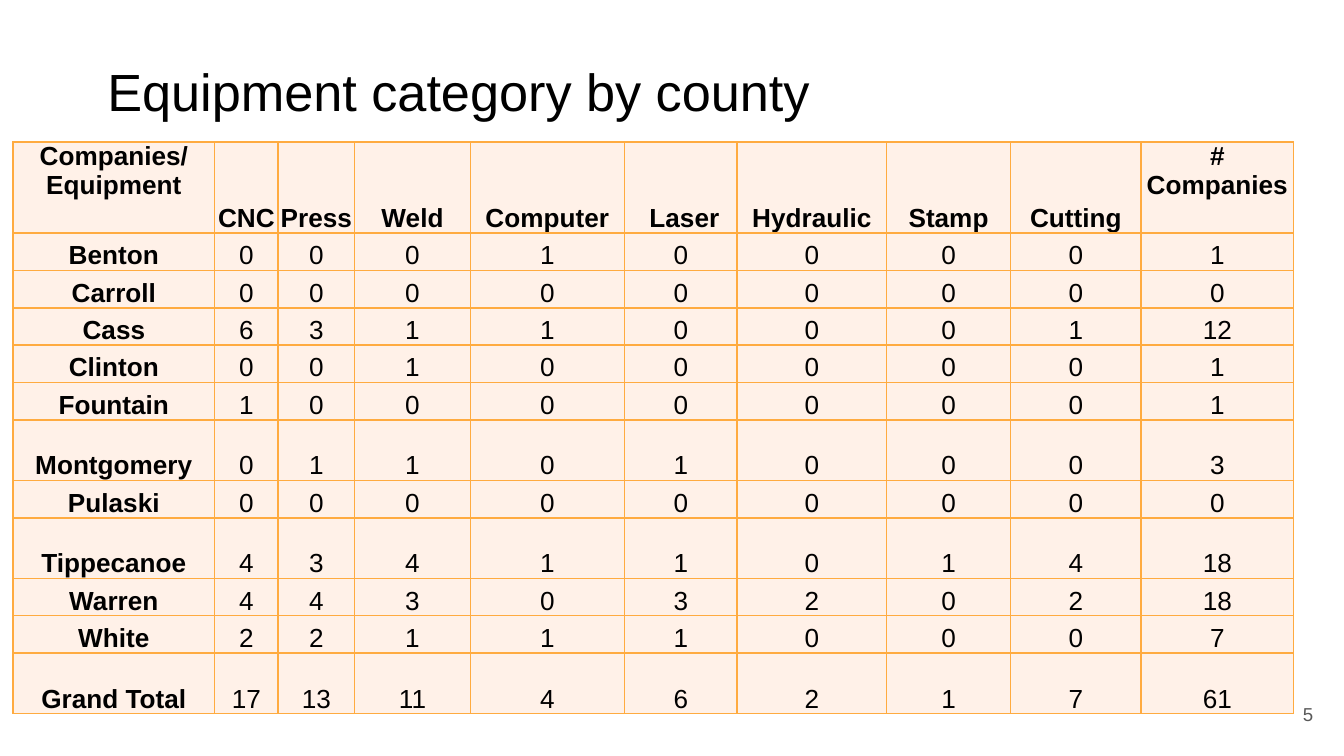
from pptx import Presentation
from pptx.dml.color import RGBColor
from pptx.enum.text import MSO_ANCHOR, PP_ALIGN
from pptx.oxml import parse_xml
from pptx.oxml.ns import nsdecls
from pptx.util import Pt

COLORS = {"text": "000000", "number": "595959", "cell": "FFF1E8", "border": "FFAB40"}

TITLE = "Equipment category by county"
PAGE = "5"
HEADER = ["Companies/\nEquipment", "CNC", "Press", "Weld", "Computer", " Laser",
          "Hydraulic", "Stamp", "Cutting", "# Companies"]
COUNTIES = [
    ("Benton", 0, 0, 0, 1, 0, 0, 0, 0, 1),
    ("Carroll", 0, 0, 0, 0, 0, 0, 0, 0, 0),
    ("Cass", 6, 3, 1, 1, 0, 0, 0, 1, 12),
    ("Clinton", 0, 0, 1, 0, 0, 0, 0, 0, 1),
    ("Fountain", 1, 0, 0, 0, 0, 0, 0, 0, 1),
    ("Montgomery", 0, 1, 1, 0, 1, 0, 0, 0, 3),
    ("Pulaski", 0, 0, 0, 0, 0, 0, 0, 0, 0),
    ("Tippecanoe", 4, 3, 4, 1, 1, 0, 1, 4, 18),
    ("Warren", 4, 4, 3, 0, 3, 2, 0, 2, 18),
    ("White", 2, 2, 1, 1, 1, 0, 0, 0, 7),
    ("Grand Total", 17, 13, 11, 4, 6, 2, 1, 7, 61),
]
COL_WIDTHS = [108, 34, 41, 62, 82.5, 60.5, 80, 66.5, 70, 81.5]
HEADER_HEIGHT, ROW_HEIGHT, TALL_HEIGHT = 49, 20, 32.5
TALL_ROWS = {"Montgomery", "Tippecanoe", "Grand Total"}


def write(tf, text, size=14, color="text", bold=False, align=PP_ALIGN.CENTER):
    tf.word_wrap = True
    for i, line in enumerate(text.split("\n")):
        p = tf.add_paragraph() if i else tf.paragraphs[0]
        p.alignment = align
        r = p.add_run()
        r.text = line
        r.font.name = "Arial"
        r.font.size = Pt(size)
        r.font.bold = bold
        r.font.color.rgb = RGBColor.from_string(COLORS[color])


def add_text(slide, box, text, anchor=MSO_ANCHOR.TOP, inset_top=7.2, **fmt):
    tf = slide.shapes.add_textbox(*map(Pt, box)).text_frame
    tf.margin_left = tf.margin_right = tf.margin_bottom = Pt(7.2)
    tf.margin_top = Pt(inset_top)
    tf.vertical_anchor = anchor
    write(tf, text, **fmt)


def style_cell(cell, anchor):
    cell.margin_left = cell.margin_right = cell.margin_top = cell.margin_bottom = 0
    cell.vertical_anchor = anchor
    tc_pr = cell._tc.get_or_add_tcPr()
    for side in ("lnL", "lnR", "lnT", "lnB"):
        tc_pr.append(parse_xml(
            f'<a:{side} {nsdecls("a")} w="{Pt(1)}"><a:solidFill>'
            f'<a:srgbClr val="{COLORS["border"]}"/></a:solidFill></a:{side}>'))
    cell.fill.solid()
    cell.fill.fore_color.rgb = RGBColor.from_string(COLORS["cell"])


def add_county_table(slide, left, top):
    rows = [HEADER, *COUNTIES]
    heights = [HEADER_HEIGHT] + [TALL_HEIGHT if row[0] in TALL_ROWS else ROW_HEIGHT
                                 for row in COUNTIES]
    table = slide.shapes.add_table(len(rows), len(HEADER), Pt(left), Pt(top),
                                   Pt(sum(COL_WIDTHS)), Pt(sum(heights))).table
    table.horz_banding = False
    for col, width in zip(table.columns, COL_WIDTHS):
        col.width = Pt(width)
    for i, (row, height) in enumerate(zip(rows, heights)):
        table.rows[i].height = Pt(height)
        for j, value in enumerate(row):
            cell = table.cell(i, j)
            two_lines = i == 0 and j in (0, len(HEADER) - 1)
            style_cell(cell, MSO_ANCHOR.TOP if two_lines else MSO_ANCHOR.BOTTOM)
            write(cell.text_frame, str(value), bold=i == 0 or j == 0)


def main():
    prs = Presentation()
    prs.slide_width, prs.slide_height = Pt(720), Pt(405)
    slide = prs.slides.add_slide(prs.slide_layouts[6])
    add_text(slide, (50.4, 21.6, 620.6, 45.4), TITLE, inset_top=10,
             size=28, align=PP_ALIGN.LEFT)
    add_county_table(slide, 7, 76)
    add_text(slide, (667.4, 367.2, 43.2, 31), PAGE, anchor=MSO_ANCHOR.MIDDLE,
             size=10, color="number", align=PP_ALIGN.RIGHT)
    prs.save("out.pptx")


if __name__ == "__main__":
    main()
